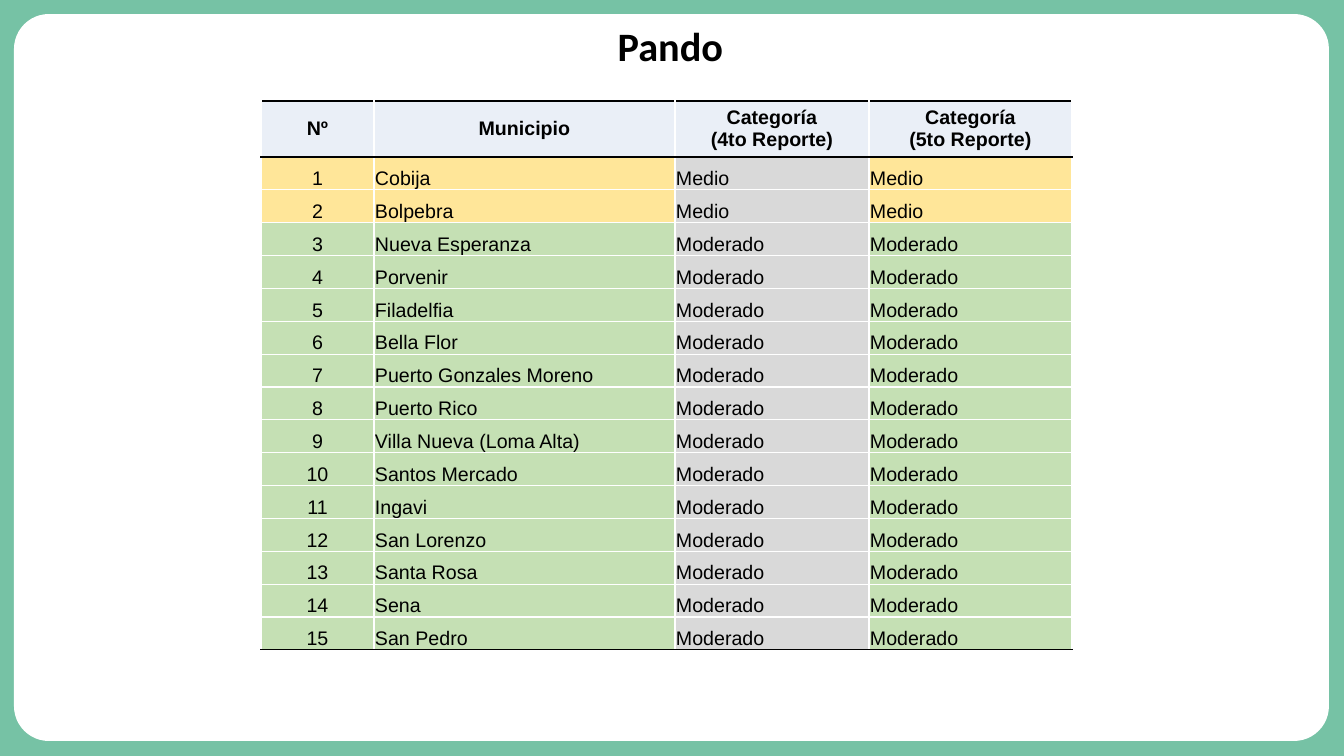
"""Build the slide that lists the municipalities of Pando by category."""
import dataclasses

import lxml.etree
import pptx
import pptx.dml.color
import pptx.enum.shapes
import pptx.enum.text
import pptx.oxml.ns
import pptx.util

ALIGN = pptx.enum.text.PP_ALIGN
ANCHOR = pptx.enum.text.MSO_ANCHOR

HEADINGS = ["Nº", "Municipio", "Categoría\n(4to Reporte)", "Categoría\n(5to Reporte)"]
MUNICIPALITIES = {
    "Medio": ["Cobija", "Bolpebra"],
    "Moderado": [
        "Nueva Esperanza", "Porvenir", "Filadelfia", "Bella Flor",
        "Puerto Gonzales Moreno", "Puerto Rico", "Villa Nueva (Loma Alta)",
        "Santos Mercado", "Ingavi", "San Lorenzo", "Santa Rosa", "Sena", "San Pedro",
    ],
}
COLUMN_WIDTHS = [113, 301, 194, 203]


@dataclasses.dataclass(frozen=True)
class Theme:
    background: str = "76C2A5"
    panel: str = "FFFFFF"
    text: str = "000000"
    heading: str = "EAEFF7"
    previous: str = "D9D9D9"
    medio: str = "FFE699"
    moderado: str = "C5E0B4"
    grid: str = "FFFFFF"
    rule: str = "000000"
    title_font: str = "Calibri"
    table_font: str = "Arial"
    title_size: float = 28.8
    table_size: float = 14


def px(length):
    return round(length * 914400 / 100.8)


def rgb(code):
    return pptx.dml.color.RGBColor.from_string(code)


def write(text_frame, text, *, font, size, color, bold=False, align=ALIGN.LEFT, spacing=1.0):
    for index, line in enumerate(text.split("\n")):
        paragraph = text_frame.add_paragraph() if index else text_frame.paragraphs[0]
        paragraph.alignment = align
        paragraph.line_spacing = spacing
        run = paragraph.add_run()
        run.text = line
        run.font.name = font
        run.font.size = pptx.util.Pt(size)
        run.font.bold = bold
        run.font.color.rgb = rgb(color)


class SlideBuilder:
    def __init__(self, presentation, theme):
        self.theme = theme
        self.slide = presentation.slides.add_slide(presentation.slide_layouts[6])
        background = self.slide.background.fill
        background.solid()
        background.fore_color.rgb = rgb(theme.background)

    def panel(self, left, top, width, height, rounding):
        shape = self.slide.shapes.add_shape(
            pptx.enum.shapes.MSO_SHAPE.ROUNDED_RECTANGLE,
            px(left), px(top), px(width), px(height))
        shape.adjustments[0] = rounding
        shape.shadow.inherit = False
        shape.fill.solid()
        shape.fill.fore_color.rgb = rgb(self.theme.panel)
        shape.line.fill.background()

    def title(self, text, left, top, width, height):
        shape = self.slide.shapes.add_textbox(px(left), px(top), px(width), px(height))
        shape.text_frame.word_wrap = True
        shape.text_frame.vertical_anchor = ANCHOR.MIDDLE
        write(shape.text_frame, text, font=self.theme.title_font, size=self.theme.title_size,
              color=self.theme.text, bold=True, align=ALIGN.CENTER, spacing=0.9)

    def border(self, cell, side, color):
        properties = cell._tc.get_or_add_tcPr()
        line = lxml.etree.SubElement(
            properties, pptx.oxml.ns.qn(f"a:ln{side}"), w=str(pptx.util.Pt(1)))
        fill = lxml.etree.SubElement(line, pptx.oxml.ns.qn("a:solidFill"))
        lxml.etree.SubElement(fill, pptx.oxml.ns.qn("a:srgbClr"), val=color)

    def cell(self, cell, text, fill, *, heading, centered, top, bottom):
        grid = self.theme.grid
        for side, color in {"L": grid, "R": grid, "T": top, "B": bottom}.items():
            self.border(cell, side, color)
        cell.fill.solid()
        cell.fill.fore_color.rgb = rgb(fill)
        cell.vertical_anchor = ANCHOR.MIDDLE if heading else ANCHOR.BOTTOM
        inset = px(0 if centered else 1)
        cell.margin_left = cell.margin_right = cell.margin_top = inset
        cell.margin_bottom = 0
        write(cell.text_frame, text, font=self.theme.table_font, size=self.theme.table_size,
              color=self.theme.text, bold=heading,
              align=ALIGN.CENTER if centered else ALIGN.LEFT)

    def table(self, rows, fills, left, top, widths, heading_height, body_height):
        table = self.slide.shapes.add_table(
            len(rows), len(widths), px(left), px(top),
            px(sum(widths)), px(heading_height + body_height)).table
        table.first_row = table.horz_banding = False
        for column, width in zip(table.columns, widths):
            column.width = px(width)
        last = len(rows) - 1
        for index, row in enumerate(table.rows):
            heading = index == 0
            row.height = px(heading_height) if heading else px(body_height) // last
            for position, cell in enumerate(row.cells):
                self.cell(
                    cell, rows[index][position], fills[index][position],
                    heading=heading, centered=heading or position == 0,
                    top=self.theme.rule if index <= 1 else self.theme.grid,
                    bottom=self.theme.rule if index in (0, last) else self.theme.grid)


def main():
    presentation = pptx.Presentation()
    presentation.slide_width = px(1344)
    presentation.slide_height = px(756)
    theme = Theme()
    builder = SlideBuilder(presentation, theme)
    builder.panel(14, 14, 1315, 727, 0.048)
    builder.title("Pando", 52, 21, 1237, 55)

    category_fills = {"Medio": theme.medio, "Moderado": theme.moderado}
    rows = [HEADINGS]
    fills = [[theme.heading] * len(HEADINGS)]
    for category, names in MUNICIPALITIES.items():
        fill = category_fills[category]
        for name in names:
            rows.append([str(len(rows)), name, category, category])
            fills.append([fill, fill, theme.previous, fill])
    builder.table(rows, fills, 261, 101, COLUMN_WIDTHS, 56, 493)
    presentation.save("out.pptx")


if __name__ == "__main__":
    main()
